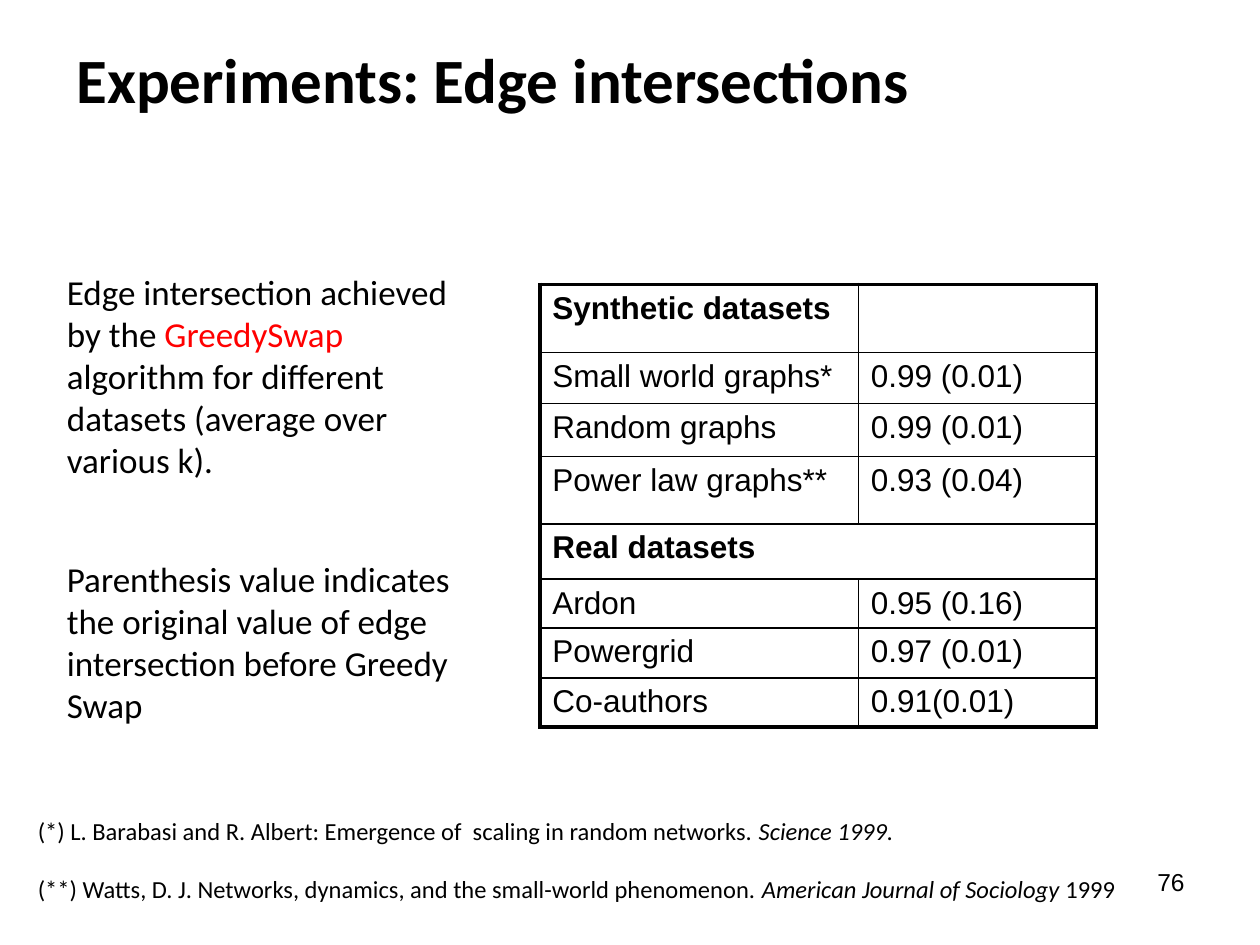
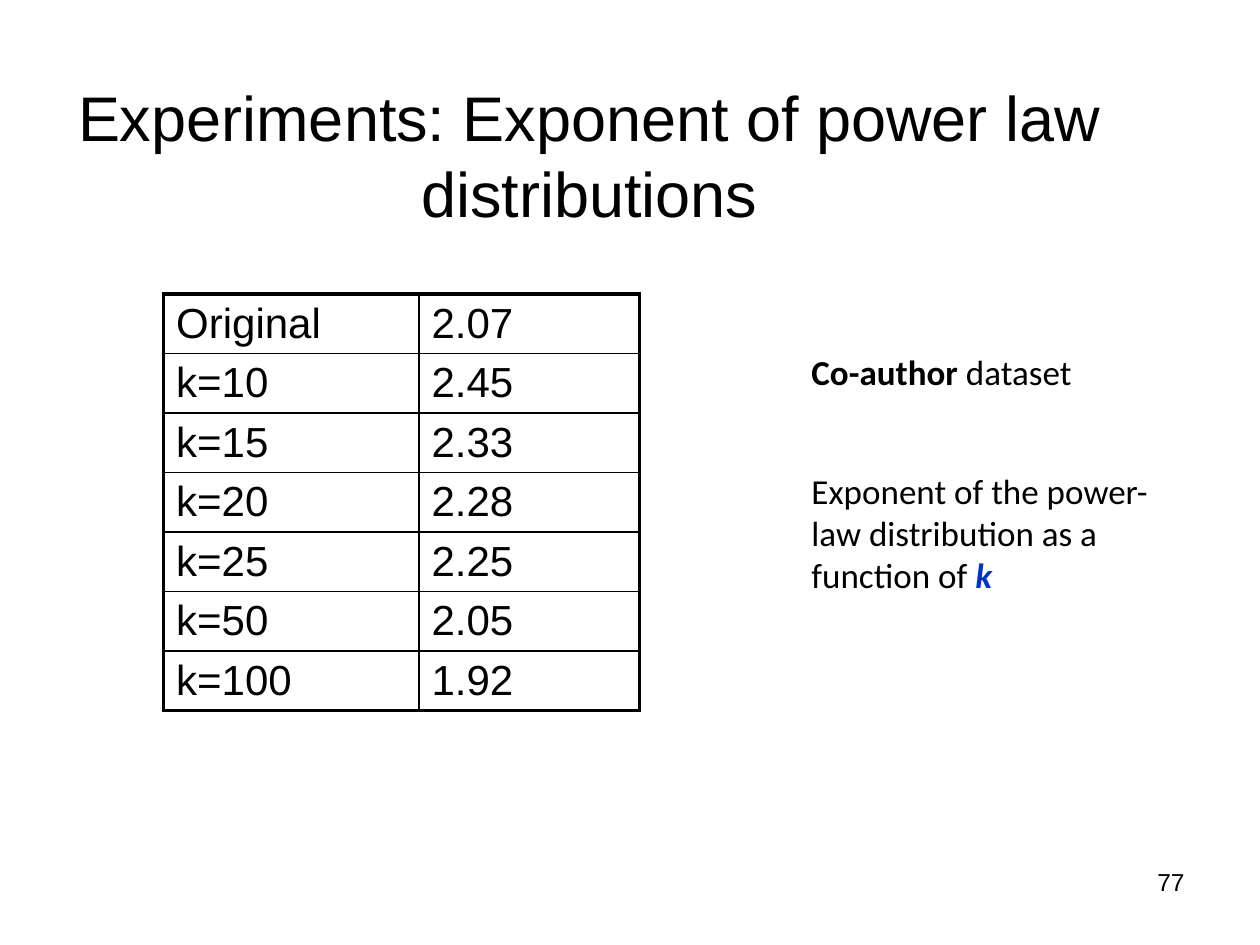
from dataclasses import dataclass
from typing import NamedTuple, Optional

from lxml import etree
from pptx import Presentation
from pptx.dml.color import RGBColor
from pptx.enum import text as t
from pptx.oxml.ns import qn
from pptx.util import Pt


# Shared look
@dataclass(frozen=True)
class Theme:
    ink: str = "000000"
    red: str = "FF0000"
    blue: str = "0033CC"
    sans: str = "Arial"
    soft: str = "Calibri"
    head: float = 36
    side: float = 20
    note: float = 14
    thick: float = 2.25
    thin: float = 1
    gap: float = 44  # space between side paragraphs


LOOK = Theme()
PLAIN_GRID = "{2D5ABB26-0587-4C30-8999-92F81FD0307C}"


class Box(NamedTuple):
    left: float
    top: float
    width: float
    height: float


class Bit(NamedTuple):
    text: str
    bold: Optional[bool] = None
    slant: Optional[bool] = None
    tint: Optional[str] = None


class Face(NamedTuple):
    name: str
    size: float
    bold: bool = False


class Grid(NamedTuple):
    left: float
    top: float
    cols: list[float]
    rows: list[float]
    size: float
    cells: list[tuple[str, ...]]  # a row with one entry spans all columns
    heads: tuple[int, ...] = ()  # bold rows


class Page(NamedTuple):
    number: int
    title: str
    title_box: Box
    title_face: Face
    title_side: t.PP_ALIGN
    side_box: Box
    side: list[list[Bit]]
    grid: Grid
    notes: list[list[Bit]] = []


NUMBER_BOX = Box(516, 492, 168, 37.5)
NOTE_BOX = Box(14.5, 463, 705.5, 24)
NOTE_STEP = 33

PAGES = [
    Page(
        76, "Experiments: Edge intersections", Box(36.5, 18, 612, 54),
        Face(LOOK.soft, LOOK.head, True), t.PP_ALIGN.LEFT,
        Box(31, 151, 250, 274),
        [
            [Bit("Edge intersection achieved by the "),
             Bit("GreedySwap ", tint=LOOK.red),
             Bit("algorithm for different datasets (average over various k).")],
            [Bit("Parenthesis value indicates the original value of edge "
                 "intersection before Greedy Swap")],
        ],
        Grid(
            308.5, 162.5, [182, 136],
            [39, 29, 30.5, 38.5, 31.5, 28, 28.5, 28], 18,
            [
                ("Synthetic datasets", ""),
                ("Small world graphs*", "0.99 (0.01)"),
                ("Random graphs", "0.99 (0.01)"),
                ("Power law graphs**", "0.93 (0.04)"),
                ("Real datasets",),
                ("Ardon", "0.95 (0.16)"),
                ("Powergrid", "0.97 (0.01)"),
                ("Co-authors", "0.91(0.01)"),
            ],
            heads=(0, 4),
        ),
        [
            [Bit("(*) L. Barabasi and R. Albert: Emergence of  scaling in "
                 "random networks. "),
             Bit("Science 1999.", slant=True)],
            [Bit("(**) Watts, D. J. Networks, dynamics, and the small-world "
                 "phenomenon. "),
             Bit("American Journal of Sociology ", slant=True),
             Bit("1999")],
        ],
    ),
    Page(
        77, "Experiments: Exponent of power law distributions",
        Box(12, 68.5, 649.5, 39.5),
        Face(LOOK.sans, LOOK.head), t.PP_ALIGN.CENTER,
        Box(456.5, 196.5, 215, 284.5),
        [
            [Bit("Co-author", bold=True), Bit(" dataset")],
            [Bit("Exponent of the power-law distribution as a function of "),
             Bit("k", True, True, LOOK.blue)],
        ],
        Grid(
            93.5, 168, [146, 126], [34] * 7, 24,
            [
                ("Original", "2.07"),
                ("k=10", "2.45"),
                ("k=15", "2.33"),
                ("k=20", "2.28"),
                ("k=25", "2.25"),
                ("k=50", "2.05"),
                ("k=100", "1.92"),
            ],
        ),
    ),
]


# Text
def style(para, face: Face) -> None:
    font = para.font
    font.name, font.size, font.bold = face.name, Pt(face.size), face.bold
    font.color.rgb = RGBColor.from_string(LOOK.ink)


def write(para, bits: list[Bit], face: Face,
          side: t.PP_ALIGN = t.PP_ALIGN.LEFT) -> None:
    style(para, face)
    para.alignment = side
    for bit in bits:
        run = para.add_run()
        run.text = bit.text
        if bit.bold is not None:
            run.font.bold = bit.bold
        if bit.slant is not None:
            run.font.italic = bit.slant
        if bit.tint:
            run.font.color.rgb = RGBColor.from_string(bit.tint)


def place(shape, box: Box) -> None:
    shape.left, shape.top, shape.width, shape.height = map(Pt, box)
    shape.text_frame.word_wrap = True
    shape.text_frame.auto_size = t.MSO_AUTO_SIZE.NONE


def add_line(slide, box: Box, bits: list[Bit], face: Face,
             side: t.PP_ALIGN = t.PP_ALIGN.LEFT) -> None:
    shape = slide.shapes.add_textbox(*map(Pt, box))
    place(shape, box)
    write(shape.text_frame.paragraphs[0], bits, face, side)


def fill_title(slide, page: Page) -> None:
    shape = slide.shapes.title
    place(shape, page.title_box)
    shape.text_frame.vertical_anchor = t.MSO_ANCHOR.MIDDLE
    write(shape.text_frame.paragraphs[0], [Bit(page.title)],
          page.title_face, page.title_side)


def fill_side(slide, page: Page) -> None:
    shape = slide.placeholders[1]
    place(shape, page.side_box)
    frame = shape.text_frame
    for i, bits in enumerate(page.side):
        para = frame.add_paragraph() if i else frame.paragraphs[0]
        para.space_before = Pt(LOOK.gap if i else 0)
        props = para._p.get_or_add_pPr()
        props.set("marL", "0")
        props.set("indent", "0")
        etree.SubElement(props, qn("a:buNone"))
        write(para, bits, Face(LOOK.soft, LOOK.side))


# Table
def add_edge(cell, tag: str, width: float) -> None:
    line = etree.SubElement(cell._tc.get_or_add_tcPr(), qn(f"a:{tag}"),
                            w=str(Pt(width)))
    fill = etree.SubElement(line, qn("a:solidFill"))
    etree.SubElement(fill, qn("a:srgbClr"), val=LOOK.ink)


def frame_cell(cell, row: int, col: int, rows: int, cols: int) -> None:
    span = cell.span_width if cell.is_merge_origin else 1
    outer = {"lnL": col == 0, "lnR": col + span == cols,
             "lnT": row == 0, "lnB": row == rows - 1}
    for tag, rim in outer.items():
        if not (cell.is_spanned and tag == "lnL"):
            add_edge(cell, tag, LOOK.thick if rim else LOOK.thin)
    cell.fill.background()


def add_grid(slide, grid: Grid) -> None:
    rows, cols = len(grid.rows), len(grid.cols)
    table = slide.shapes.add_table(
        rows, cols, Pt(grid.left), Pt(grid.top),
        Pt(sum(grid.cols)), Pt(sum(grid.rows))).table
    table.first_row = table.horz_banding = False
    table._tbl.tblPr.find(qn("a:tableStyleId")).text = PLAIN_GRID
    for col, width in enumerate(grid.cols):
        table.columns[col].width = Pt(width)
    for row, words in enumerate(grid.cells):
        table.rows[row].height = Pt(grid.rows[row])
        if len(words) == 1:
            table.cell(row, 0).merge(table.cell(row, cols - 1))
        face = Face(LOOK.sans, grid.size, row in grid.heads)
        for col in range(cols):
            cell = table.cell(row, col)
            frame_cell(cell, row, col, rows, cols)
            bits = [Bit(word) for word in words[col:col + 1] if word]
            write(cell.text_frame.paragraphs[0], bits, face)


# Slides
def add_page(deck, page: Page) -> None:
    slide = deck.slides.add_slide(deck.slide_layouts[1])
    add_line(slide, NUMBER_BOX, [Bit(str(page.number))],
             Face(LOOK.sans, LOOK.note), t.PP_ALIGN.RIGHT)
    fill_title(slide, page)
    add_grid(slide, page.grid)
    for i, bits in enumerate(page.notes):
        box = NOTE_BOX._replace(top=NOTE_BOX.top + i * NOTE_STEP)
        add_line(slide, box, bits, Face(LOOK.soft, LOOK.note))
    fill_side(slide, page)


def main() -> None:
    deck = Presentation()
    deck.slide_width, deck.slide_height = Pt(720), Pt(540)
    for page in PAGES:
        add_page(deck, page)
    deck.save("out.pptx")


if __name__ == "__main__":
    main()
